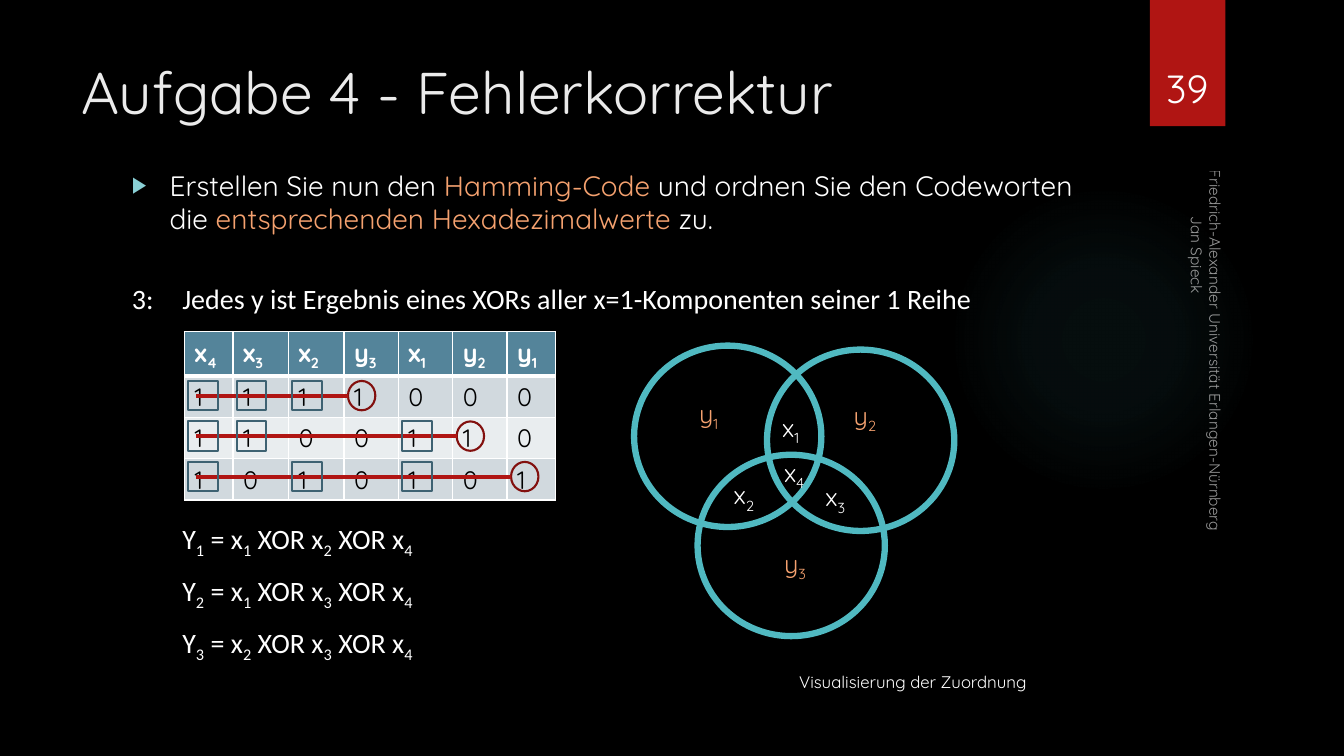
from lxml import etree
from pptx import Presentation
from pptx.dml import color
from pptx.enum import shapes, text
from pptx.oxml import ns, parse_xml
from pptx.util import Cm, Pt

WHITE, BLACK, ORANGE, TEAL = "FFFFFF", "000000", "F4A16F", "50B9C1"
RED, DARK_RED, SLATE = "B01513", "82100E", "3E6272"
FONT = "Quicksand"

HEADERS = ["x4", "x3", "x2", "y3", "x1", "y2", "y1"]
CODE_ROWS = ["1111000", "1100110", "1010101"]
COLUMN_WIDTHS = [1.22, 1.4, 1.4, 1.37, 1.37, 1.37, 1.22]
TABLE_LEFT, TABLE_TOP = 4.65, 8.36
HEADER_HEIGHT, ROW_HEIGHT = 1.12, 1.04
EQUATIONS = [("1", "124"), ("2", "134"), ("3", "234")]
VENN_CIRCLES = [(15.98, 8.71), (19.33, 8.81), (17.58, 11.46)]
VENN_LABELS = [
    ("x1", 19.46, 10.26), ("x2", 18.24, 11.96), ("x3", 20.55, 12.01), ("x4", 19.51, 11.4),
    ("y1", 17.37, 9.91), ("y2", 21.26, 9.96), ("y3", 19.51, 13.69),
]


def rgb(value):
    return color.RGBColor.from_string(value)


def lengths(*values):
    return [Cm(value) for value in values]


def add_child(parent, tag, **attributes):
    return etree.SubElement(parent, ns.qn(tag), attributes)


def add_run(paragraph, content, size, fill=WHITE, font=FONT, bold=False):
    run = paragraph.add_run()
    run.text = content
    run.font.size = Pt(size)
    run.font.name = font
    run.font.bold = bold
    run.font.color.rgb = rgb(fill)
    return run


def add_indexed(paragraph, base, index, size, **style):
    """Add a base text followed by its subscript."""
    add_run(paragraph, base, size, **style)
    subscript = add_run(paragraph, index, size, **style)
    subscript.font._element.set("baseline", "-25000")


def add_textbox(slide, *box):
    textbox = slide.shapes.add_textbox(*lengths(*box))
    textbox.text_frame.word_wrap = True
    return textbox


def add_shape(slide, kind, box, fill=None, line=None, weight=1.5):
    shape = slide.shapes.add_shape(kind, *lengths(*box))
    shape.shadow.inherit = False
    if fill:
        shape.fill.solid()
        shape.fill.fore_color.rgb = rgb(fill)
    else:
        shape.fill.background()
    if line:
        shape.line.color.rgb = rgb(line)
        shape.line.width = Pt(weight)
    else:
        shape.line.fill.background()
    return shape


def add_line(slide, *ends):
    line = slide.shapes.add_connector(shapes.MSO_CONNECTOR.STRAIGHT, *lengths(*ends))
    line.line.color.rgb = rgb(RED)
    line.line.width = Pt(3)
    add_child(line._element.spPr, "a:effectLst")


def place(placeholder, *box):
    placeholder.left, placeholder.top, placeholder.width, placeholder.height = lengths(*box)
    frame = placeholder.text_frame
    frame.word_wrap = True
    frame.auto_size = text.MSO_AUTO_SIZE.NONE
    frame.vertical_anchor = text.MSO_ANCHOR.TOP
    return frame


def set_indent(paragraph, left, first=0):
    properties = paragraph._p.get_or_add_pPr()
    properties.set("marL", str(Cm(left)))
    properties.set("indent", str(Cm(first)))
    return properties


def add_glow(slide):
    """Put a faint radial gradient behind everything else."""
    glow = add_shape(slide, shapes.MSO_SHAPE.OVAL, (23.9, 4.65, 7.82, 7.82))
    stops = "".join(
        f'<a:gs pos="{position}000"><a:srgbClr val="{TEAL}"><a:alpha val="{alpha}000"/></a:srgbClr></a:gs>'
        for position, alpha in [(0, 7), (36, 6), (69, 0)]
    )
    gradient = parse_xml(
        f'<a:gradFill {ns.nsdecls("a")}><a:gsLst>{stops}</a:gsLst><a:path path="circle">'
        '<a:fillToRect l="50000" t="50000" r="50000" b="50000"/></a:path></a:gradFill>'
    )
    properties = glow._element.spPr
    properties.replace(properties.find(ns.qn("a:noFill")), gradient)
    slide.shapes.title._element.addprevious(glow._element)


def fill_body(frame):
    task = frame.paragraphs[0]
    properties = set_indent(task, 0.95, -0.95)
    add_child(add_child(properties, "a:buClr"), "a:srgbClr", val="8AD0D6")
    add_child(properties, "a:buSzPct", val="80000")
    add_child(properties, "a:buChar", char="▶")
    task.space_before = Pt(0)
    for content, fill in [
        ("Erstellen Sie nun den ", WHITE), ("Hamming-Code", ORANGE),
        (" und ordnen Sie den Codeworten die ", WHITE),
        ("entsprechenden Hexadezimalwerte", ORANGE), (" zu.", WHITE),
    ]:
        add_run(task, content, 20, fill)

    step = frame.add_paragraph()
    add_child(set_indent(step, 1.27, -1.27), "a:buNone")
    step.space_before = Pt(33)
    add_run(step, "3:\tJedes y ist Ergebnis eines XORs aller x=1-Komponenten seiner 1 Reihe",
            20, font="Calibri")

    for number, (result, operands) in enumerate(EQUATIONS):
        equation = frame.add_paragraph()
        add_child(set_indent(equation, 1.27), "a:buNone")
        equation.space_before = Pt(10 if number else 147)
        bases = ["Y", " = x", " XOR x", " XOR x"]
        for base, index in zip(bases, result + operands):
            add_indexed(equation, base, index, 20, font="Calibri")


def set_borders(cell, **weights):
    properties = cell._tc.get_or_add_tcPr()
    for position, side in enumerate("LRTB"):
        line = parse_xml(
            f'<a:ln{side} {ns.nsdecls("a")} w="{Pt(weights.get(side, 1))}"><a:solidFill>'
            f'<a:srgbClr val="{WHITE}"/></a:solidFill></a:ln{side}>'
        )
        properties.insert(position, line)


def add_code_table(slide):
    box = TABLE_LEFT, TABLE_TOP, sum(COLUMN_WIDTHS), HEADER_HEIGHT + 3 * ROW_HEIGHT
    table = slide.shapes.add_table(4, 7, *lengths(*box)).table
    for column, width in zip(table.columns, COLUMN_WIDTHS):
        column.width = Cm(width)
    fills = ["54849A", "D1D9DE", "E9EDEF", "D1D9DE"]
    for row, entries in enumerate([HEADERS, *CODE_ROWS]):
        table.rows[row].height = Cm(ROW_HEIGHT if row else HEADER_HEIGHT)
        for column, entry in enumerate(entries):
            cell = table.cell(row, column)
            cell.fill.solid()
            cell.fill.fore_color.rgb = rgb(fills[row])
            paragraph = cell.text_frame.paragraphs[0]
            if row:
                add_run(paragraph, entry, 18, BLACK)
            else:
                add_indexed(paragraph, entry[0], entry[1], 18, bold=True)
            set_borders(cell, **({"B": 3} if row == 0 else {"T": 3} if row == 1 else {}))


def mark_ones(slide):
    """Box the data ones of each row and join them to the circled parity bit."""
    for row, bits in enumerate(CODE_ROWS):
        top = 9.6 + 1.02 * row
        lefts = [TABLE_LEFT + sum(COLUMN_WIDTHS[:column]) + 0.1
                 for column, bit in enumerate(bits) if bit == "1"]
        *data_lefts, parity_left = lefts
        add_shape(slide, shapes.MSO_SHAPE.OVAL, (parity_left, top, 0.69, 0.74), line=DARK_RED)
        add_line(slide, parity_left, top + 0.37, 4.95, top + 0.37)
        for left in data_lefts:
            add_shape(slide, shapes.MSO_SHAPE.RECTANGLE, (left, top, 0.74, 0.74), line=SLATE)


def add_venn_diagram(slide):
    for left, top in VENN_CIRCLES:
        add_shape(slide, shapes.MSO_SHAPE.OVAL, (left, top, 4.72, 4.57), line=TEAL, weight=4.5)
    for (base, index), left, top in VENN_LABELS:
        label = add_textbox(slide, left, top, 1.27, 1.02)
        add_indexed(label.text_frame.paragraphs[0], base, index, 18,
                    fill=ORANGE if base == "y" else WHITE)
    caption = add_textbox(slide, 19.89, 16.79, 7.14, 0.76)
    add_run(caption.text_frame.paragraphs[0], "Visualisierung der Zuordnung", 12)


def add_side_column(slide):
    add_shape(slide, shapes.MSO_SHAPE.RECTANGLE, (28.98, 0, 1.9, 3.18), fill=RED)
    number = add_textbox(slide, 28.75, 0.81, 2.34, 2.13).text_frame
    number.vertical_anchor = text.MSO_ANCHOR.BOTTOM
    number.paragraphs[0].alignment = text.PP_ALIGN.CENTER
    add_run(number.paragraphs[0], "39", 28)

    footer = add_textbox(slide, 24.87, 8.97, 10.72, 0.84)
    footer.rotation = 90
    frame = footer.text_frame
    frame.vertical_anchor = text.MSO_ANCHOR.BOTTOM
    author = frame.add_paragraph()
    set_indent(author, 1.18)
    for paragraph, content in [
        (frame.paragraphs[0], "Friedrich-Alexander Universität Erlangen-Nürnberg"),
        (author, "Jan Spieck"),
    ]:
        run = add_run(paragraph, content, 11)
        add_child(run.font._element.find(".//" + ns.qn("a:srgbClr")), "a:alpha", val="60000")


def main():
    presentation = Presentation()
    presentation.slide_width, presentation.slide_height = lengths(33.87, 19.05)
    slide = presentation.slides.add_slide(presentation.slide_layouts[1])
    slide.background.fill.solid()
    slide.background.fill.fore_color.rgb = rgb(BLACK)
    add_glow(slide)
    title = place(slide.shapes.title, 1.8, 1.27, 26.14, 3.89).paragraphs[0]
    title.alignment = text.PP_ALIGN.LEFT
    add_run(title, "Aufgabe 4 - Fehlerkorrektur", 42, "EBEBEB")
    fill_body(place(slide.placeholders[1], 3.07, 4.11, 24.84, 13.34))
    add_side_column(slide)
    add_code_table(slide)
    mark_ones(slide)
    add_venn_diagram(slide)
    presentation.save("out.pptx")


if __name__ == "__main__":
    main()
